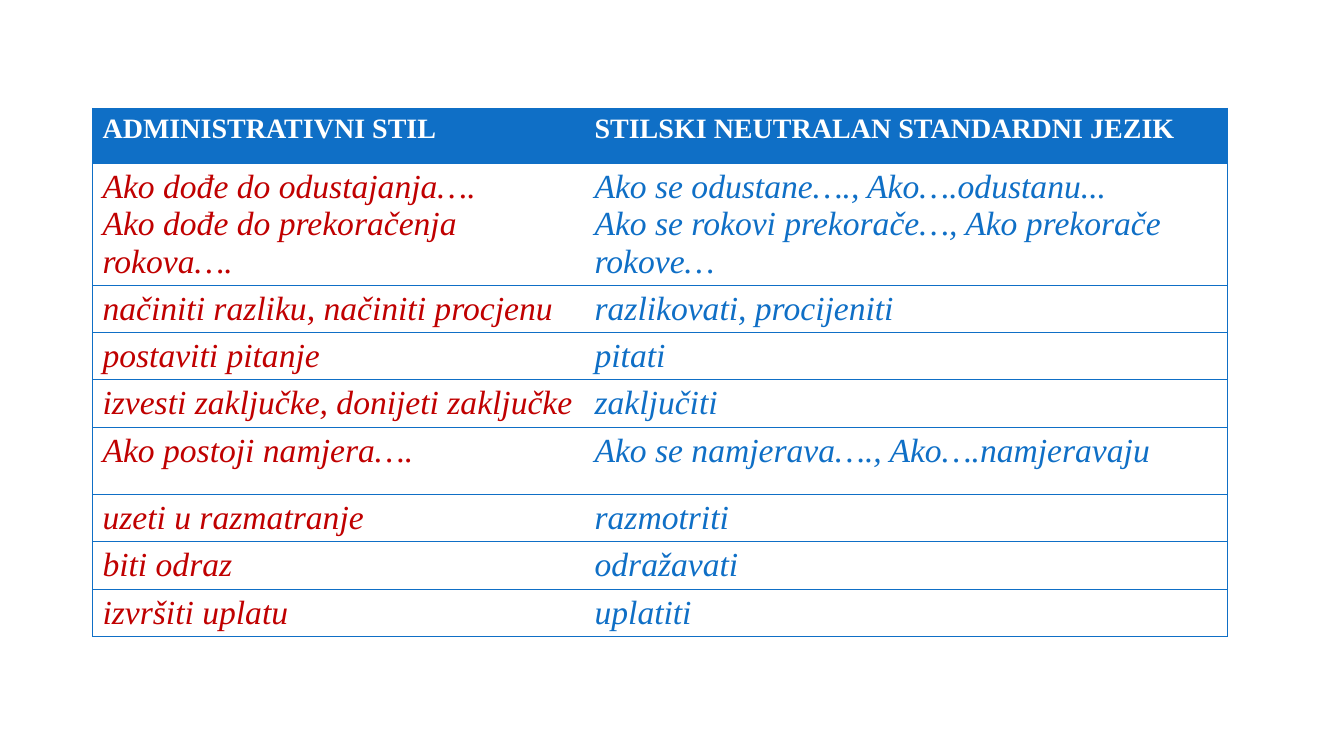
from dataclasses import dataclass

from lxml.etree import SubElement
from pptx import Presentation
from pptx.dml.color import RGBColor
from pptx.oxml.ns import qn
from pptx.util import Cm, Pt


@dataclass(frozen=True)
class Theme:
    font: str = "Times New Roman"
    blue: str = "0F6FC6"
    red: str = "C00000"
    white: str = "FFFFFF"
    heading_size: int = 20
    phrase_size: int = 24
    rule_width: float = 0.75


THEME = Theme()

HEADINGS = ("ADMINISTRATIVNI STIL", "STILSKI NEUTRALAN STANDARDNI JEZIK")

# Row height in cm, administrative phrase, neutral phrase
PHRASES = [
    (2.0, "Ako dođe do odustajanja….\nAko dođe do prekoračenja rokova….",
     "Ako se odustane…., Ako….odustanu...\n"
     "Ako se rokovi prekorače…, Ako prekorače rokove…"),
    (1.18, "načiniti razliku, načiniti procjenu", "razlikovati, procijeniti"),
    (1.18, "postaviti pitanje", "pitati"),
    (1.18, "izvesti zaključke, donijeti zaključke", "zaključiti"),
    (1.7, "Ako postoji namjera….", "Ako se namjerava…., Ako….namjeravaju"),
    (1.18, "uzeti u razmatranje", "razmotriti"),
    (1.18, "biti odraz", "odražavati"),
    (1.18, "izvršiti uplatu", "uplatiti"),
]
HEADING_HEIGHT = 1.4
ADMINISTRATIVE_SHARE = 12.4 / 28.6


def set_borders(cell, ruled_sides):
    """Rule the given sides of a cell and clear the others."""
    properties = cell._tc.get_or_add_tcPr()
    for side in "LRTB":
        border = SubElement(properties, qn(f"a:ln{side}"), w=str(Pt(THEME.rule_width)))
        if side in ruled_sides:
            fill = SubElement(border, qn("a:solidFill"))
            SubElement(fill, qn("a:srgbClr"), val=THEME.blue)
        else:
            SubElement(border, qn("a:noFill"))


def write_cell(cell, text, size, color, bold=False, italic=False):
    cell.text_frame.text = text
    for paragraph in cell.text_frame.paragraphs:
        for run in paragraph.runs:
            run.font.name = THEME.font
            run.font.size = Pt(size)
            run.font.color.rgb = RGBColor.from_string(color)
            run.font.bold = bold
            run.font.italic = italic


def add_style_comparison(slide, left, top, width):
    heights = [HEADING_HEIGHT] + [height for height, *_ in PHRASES]
    comparison = slide.shapes.add_table(
        len(heights), len(HEADINGS), left, top, width, Cm(sum(heights))).table
    comparison.horz_banding = False

    # Column and row sizes
    administrative_width = int(width * ADMINISTRATIVE_SHARE)
    comparison.columns[0].width = administrative_width
    comparison.columns[1].width = width - administrative_width
    for row, height in zip(comparison.rows, heights):
        row.height = Cm(height)

    # Heading row
    for column, heading in enumerate(HEADINGS):
        cell = comparison.cell(0, column)
        set_borders(cell, "LTB" if column == 0 else "RTB")
        cell.fill.solid()
        cell.fill.fore_color.rgb = RGBColor.from_string(THEME.blue)
        write_cell(cell, heading, THEME.heading_size, THEME.white, bold=True)

    # Phrase pairs
    for row, (_, *pair) in enumerate(PHRASES, start=1):
        for column, (phrase, color) in enumerate(zip(pair, (THEME.red, THEME.blue))):
            cell = comparison.cell(row, column)
            set_borders(cell, "LTB" if column == 0 else "RTB")
            cell.fill.background()
            write_cell(cell, phrase, THEME.phrase_size, color, italic=True)


def main():
    presentation = Presentation()
    presentation.slide_width = Cm(33.87)
    presentation.slide_height = Cm(19.05)
    slide = presentation.slides.add_slide(presentation.slide_layouts[6])
    add_style_comparison(slide, Cm(2.33), Cm(2.73), Cm(28.6))
    presentation.save("out.pptx")


if __name__ == "__main__":
    main()
